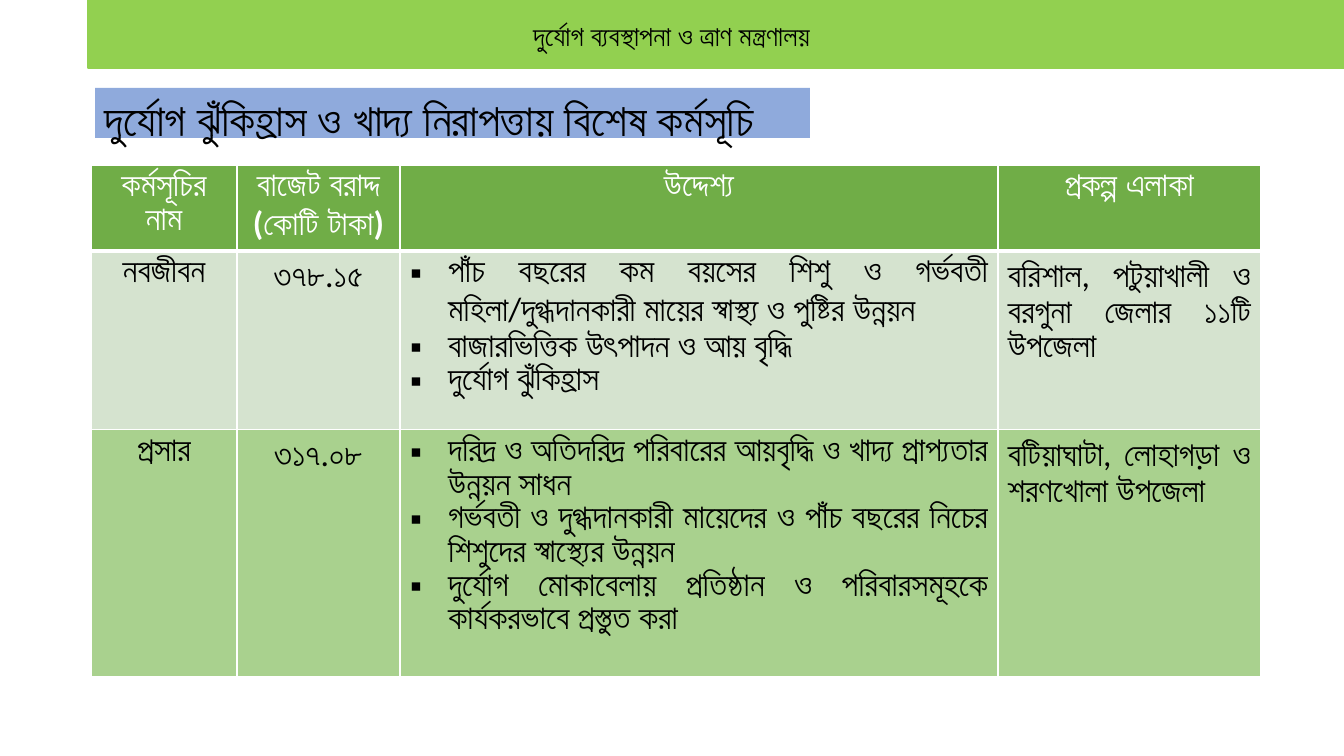
from lxml.etree import SubElement
from pptx import Presentation
from pptx.dml.color import RGBColor
from pptx.enum.shapes import MSO_SHAPE
from pptx.enum.text import MSO_ANCHOR, PP_ALIGN
from pptx.oxml.ns import qn
from pptx.util import Emu, Pt

FONT = "Calibri"
COLORS = {
    "band": "92D050",
    "title": "8FAADC",
    "header": "70AD47",
    "pale": "D5E3CF",
    "green": "A9D18E",
    "white": "FFFFFF",
    "black": "000000",
}
COLS = [146, 163, 598, 263]
ROWS = [83, 179, 218]
TABLE_HEIGHT = 522
ROW_FILLS = ["header", "pale", "green"]
BULLET_COL = 2
AREA_COL = 3
CELLS = [
    [
        ["কর্মসূচির নাম"],
        ["বাজেট বরাদ্দ (কোটি টাকা)"],
        ["উদ্দেশ্য"],
        ["প্রকল্প এলাকা"],
    ],
    [
        ["নবজীবন"],
        ["৩৭৮.১৫"],
        [
            "পাঁচ বছরের কম বয়সের শিশু ও গর্ভবতী মহিলা/দুগ্ধদানকারী মায়ের স্বাস্থ্য ও পুষ্টির উন্নয়ন",
            "বাজারভিত্তিক উৎপাদন ও আয় বৃদ্ধি",
            "দুর্যোগ ঝুঁকিহ্রাস",
        ],
        ["বরিশাল, পটুয়াখালী ও বরগুনা জেলার ১১টি উপজেলা"],
    ],
    [
        ["প্রসার"],
        ["৩১৭.০৮"],
        [
            "দরিদ্র ও অতিদরিদ্র পরিবারের আয়বৃদ্ধি ও খাদ্য প্রাপ্যতার উন্নয়ন সাধন",
            "গর্ভবতী ও দুগ্ধদানকারী মায়েদের ও পাঁচ বছরের নিচের শিশুদের স্বাস্থ্যের উন্নয়ন",
            "দুর্যোগ মোকাবেলায় প্রতিষ্ঠান ও পরিবারসমূহকে কার্যকরভাবে প্রস্তুত করা",
        ],
        ["বটিয়াঘাটা, লোহাগড়া ও শরণখোলা উপজেলা"],
    ],
]


def px(n):
    return Emu(round(n * 914400 / 100.8))


def rgb(name):
    return RGBColor.from_string(COLORS[name])


def style(p, size, color="black", align=PP_ALIGN.LEFT, bold=False):
    p.alignment = align
    for r in p.runs:
        r.font.name = FONT
        r.font.size = Pt(size)
        r.font.bold = bold
        r.font.color.rgb = rgb(color)


def add_rect(s, x, y, w, h, fill):
    sp = s.shapes.add_shape(MSO_SHAPE.RECTANGLE, px(x), px(y), px(w), px(h))
    sp.shadow.inherit = False
    sp.fill.solid()
    sp.fill.fore_color.rgb = rgb(fill)
    return sp


def add_band(s):
    sp = add_rect(s, 88, 0, 1256, 68, "band")
    sp.line.color.rgb = rgb("band")
    sp.line.width = Pt(1)


def add_ministry(s):
    tb = s.shapes.add_textbox(px(326), px(14), px(691), px(44))
    tf = tb.text_frame
    tf.word_wrap = True
    tf.text = "দুর্যোগ ব্যবস্থাপনা ও ত্রাণ মন্ত্রণালয়"
    style(tf.paragraphs[0], 20, align=PP_ALIGN.CENTER)


def add_title(s):
    sp = add_rect(s, 95, 88, 715, 50, "title")
    sp.line.fill.background()
    tf = sp.text_frame
    tf.word_wrap = True
    tf.vertical_anchor = MSO_ANCHOR.TOP
    tf.margin_top = px(10)
    tf.margin_bottom = 0
    tf.text = "দুর্যোগ ঝুঁকিহ্রাস ও খাদ্য নিরাপত্তায় বিশেষ কর্মসূচি"
    p = tf.paragraphs[0]
    p.line_spacing = 0.9
    style(p, 32)


def add_bullet(p):
    pPr = p._p.get_or_add_pPr()
    indent = px(38)
    pPr.set("marL", str(indent))
    pPr.set("indent", str(-indent))
    SubElement(pPr, qn("a:buFont"), typeface="Arial")
    SubElement(pPr, qn("a:buChar"), char="▪")


def set_borders(cell, row):
    tcPr = cell._tc.get_or_add_tcPr()
    widths = {"L": 1, "R": 1, "T": 3 if row == 1 else 1, "B": 3 if row == 0 else 1}
    for side, width in widths.items():
        ln = SubElement(tcPr, qn(f"a:ln{side}"), w=str(Pt(width)))
        fill = SubElement(ln, qn("a:solidFill"))
        SubElement(fill, qn("a:srgbClr"), val=COLORS["white"])


def fill_cell(cell, row, col, lines):
    set_borders(cell, row)
    cell.margin_bottom = 0
    cell.fill.solid()
    cell.fill.fore_color.rgb = rgb(ROW_FILLS[row])
    header = row == 0
    justified = not header and col in (BULLET_COL, AREA_COL)
    tf = cell.text_frame
    tf.text = "\n".join(lines)
    for p in tf.paragraphs:
        if not header and col == BULLET_COL:
            add_bullet(p)
        style(
            p,
            24,
            "white" if header else "black",
            PP_ALIGN.JUSTIFY if justified else PP_ALIGN.CENTER,
            header,
        )


def add_programmes(s):
    frame = s.shapes.add_table(
        len(ROWS), len(COLS), px(91), px(165), px(sum(COLS)), px(sum(ROWS))
    )
    table = frame.table
    for column, width in zip(table.columns, COLS):
        column.width = px(width)
    for row, height in zip(table.rows, ROWS):
        row.height = px(height)
    frame.height = px(TABLE_HEIGHT)
    for i, cells in enumerate(CELLS):
        for j, lines in enumerate(cells):
            fill_cell(table.cell(i, j), i, j, lines)


def main():
    prs = Presentation()
    prs.slide_width, prs.slide_height = px(1344), px(756)
    s = prs.slides.add_slide(prs.slide_layouts[6])
    add_band(s)
    add_ministry(s)
    add_title(s)
    add_programmes(s)
    prs.save("out.pptx")


if __name__ == "__main__":
    main()
